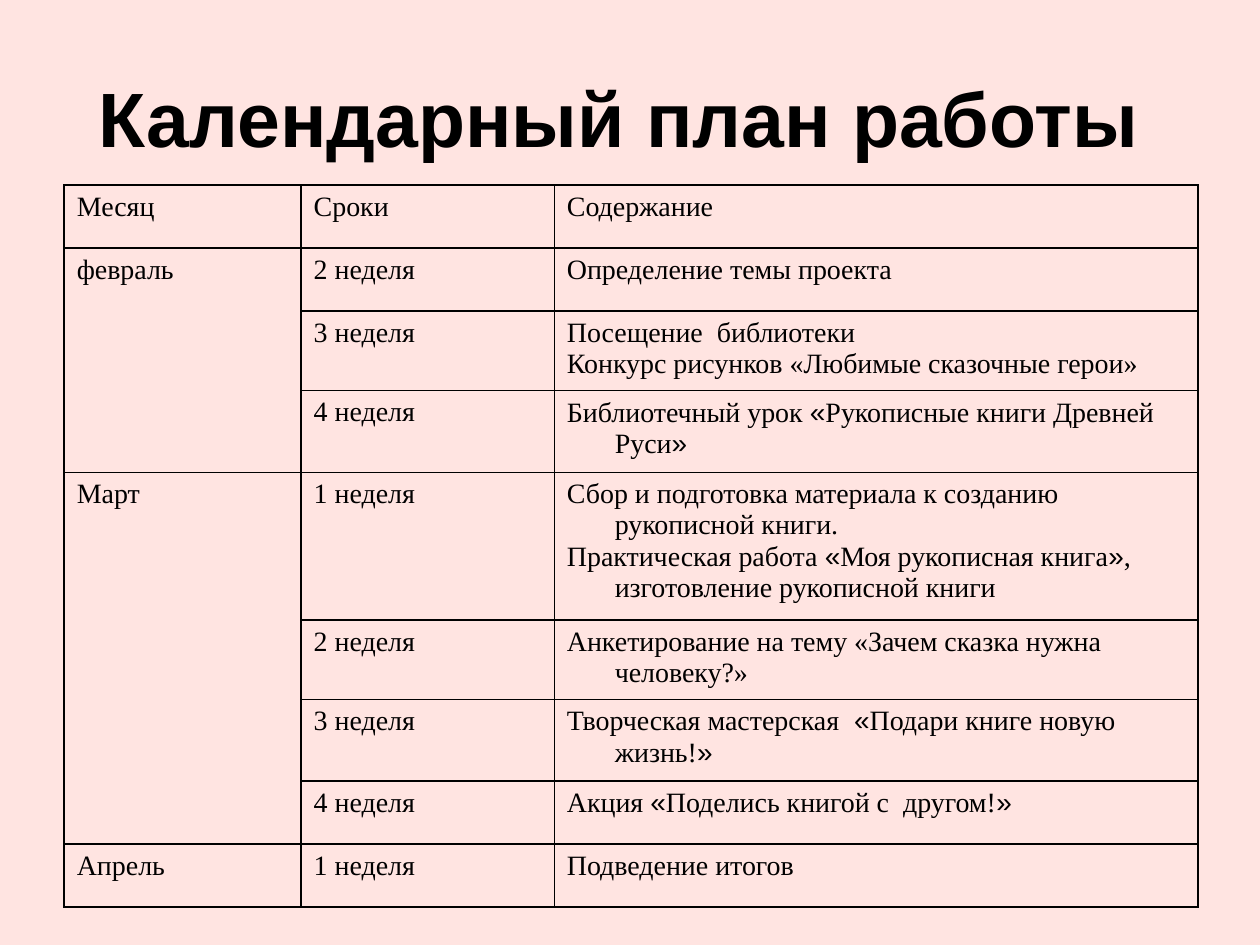
from lxml import etree
from pptx import Presentation, util as u
from pptx.dml.color import RGBColor
from pptx.enum import text
from pptx.oxml import ns

BLUSH = RGBColor(0xFF, 0xE4, 0xE1)
INK = RGBColor(0, 0, 0)
GRID_COLUMNS, GRID_ROWS = 100, 75

HEADINGS = ("Месяц", "Сроки", "Содержание")
PLAN = [
    ("февраль", [
        ("2 неделя", [["Определение темы проекта"]]),
        ("3 неделя", [["Посещение  библиотеки"],
                      ["Конкурс рисунков «Любимые сказочные герои»"]]),
        ("4 неделя", [["Библиотечный урок ", "«", "Рукописные книги Древней Руси", "»"]]),
    ]),
    ("Март", [
        ("1 неделя", [["Сбор и подготовка материала к созданию рукописной книги."],
                      ["Практическая работа ", "«", "Моя рукописная книга", "»",
                       ", изготовление рукописной книги"]]),
        ("2 неделя", [["Анкетирование на тему «Зачем сказка нужна человеку?»"]]),
        ("3 неделя", [["Творческая мастерская ", " «", "Подари книге новую жизнь!", "»"]]),
        ("4 неделя", [["Акция ", "«", "Поделись книгой с  другом!", "»"]]),
    ]),
    ("Апрель", [("1 неделя", [["Подведение итогов"]])]),
]
COLUMN_WIDTHS = (18.8, 20.1, 51.1)
ROW_HEIGHTS = (5, 5, 6.3, 6.5, 11.7, 6.3, 6.5, 5, 5)


class PlanSlide:
    """Holds the style and the current slide, measured on a grid."""

    heading_font, body_font = "Arial", "Times New Roman"
    heading_size, body_size = u.Pt(44), u.Pt(16)
    hanging = u.Inches(0.38)
    border = u.Pt(1)

    def __init__(self, deck):
        self.column = deck.slide_width / GRID_COLUMNS
        self.row = deck.slide_height / GRID_ROWS
        self.slide = deck.slides.add_slide(deck.slide_layouts[5])
        self.slide.background.fill.solid()
        self.slide.background.fill.fore_color.rgb = BLUSH

    def across(self, columns):
        return u.Emu(round(columns * self.column))

    def down(self, rows):
        return u.Emu(round(rows * self.row))

    def add_run(self, paragraph, words, font, size, bold=False):
        run = paragraph.add_run()
        run.text = words
        run.font.name, run.font.size, run.font.bold = font, size, bold
        run.font.color.rgb = INK

    def title(self, words, left, top, width, height):
        heading = self.slide.shapes.title
        heading.left, heading.top = self.across(left), self.down(top)
        heading.width, heading.height = self.across(width), self.down(height)
        heading.text_frame.vertical_anchor = text.MSO_ANCHOR.MIDDLE
        paragraph = heading.text_frame.paragraphs[0]
        paragraph.alignment = text.PP_ALIGN.CENTER
        self.add_run(paragraph, words, self.heading_font, self.heading_size, True)

    def table(self, left, top, widths, heights):
        frame = self.slide.shapes.add_table(
            len(heights), len(widths), self.across(left), self.down(top),
            self.across(sum(widths)), self.down(sum(heights)))
        table = frame.table
        table.first_row = table.horz_banding = False
        for column, width in zip(table.columns, widths):
            column.width = self.across(width)
        for row, height in zip(table.rows, heights):
            row.height = self.down(height)
        for cell in table.iter_cells():
            self.outline(cell)
        return table

    def outline(self, cell):
        properties = cell._tc.get_or_add_tcPr()
        for side in ("a:lnL", "a:lnR", "a:lnT", "a:lnB"):
            line = etree.SubElement(properties, ns.qn(side), w=str(self.border))
            fill = etree.SubElement(line, ns.qn("a:solidFill"))
            etree.SubElement(fill, ns.qn("a:srgbClr"), val=str(INK))
        cell.fill.background()

    def fill_cell(self, cell, paragraphs):
        frame = cell.text_frame
        for index, runs in enumerate(paragraphs):
            paragraph = frame.add_paragraph() if index else frame.paragraphs[0]
            properties = paragraph._p.get_or_add_pPr()
            properties.set("marL", str(self.hanging))
            properties.set("indent", str(-self.hanging))
            for position, words in enumerate(runs):
                font = self.heading_font if position % 2 else self.body_font
                self.add_run(paragraph, words, font, self.body_size)


def main():
    deck = Presentation()
    deck.slide_width, deck.slide_height = u.Inches(10), u.Inches(7.5)
    page = PlanSlide(deck)
    page.title("Календарный план работы ", 5, 3, 90, 12.5)
    schedule = page.table(5.1, 14.7, COLUMN_WIDTHS, ROW_HEIGHTS)
    for column, heading in enumerate(HEADINGS):
        page.fill_cell(schedule.cell(0, column), [[heading]])
    row = 1
    for month, weeks in PLAN:
        month_cell = schedule.cell(row, 0)
        if len(weeks) > 1:
            month_cell.merge(schedule.cell(row + len(weeks) - 1, 0))
        page.fill_cell(month_cell, [[month]])
        for week, activities in weeks:
            page.fill_cell(schedule.cell(row, 1), [[week]])
            page.fill_cell(schedule.cell(row, 2), activities)
            row += 1
    deck.save("out.pptx")


if __name__ == "__main__":
    main()
